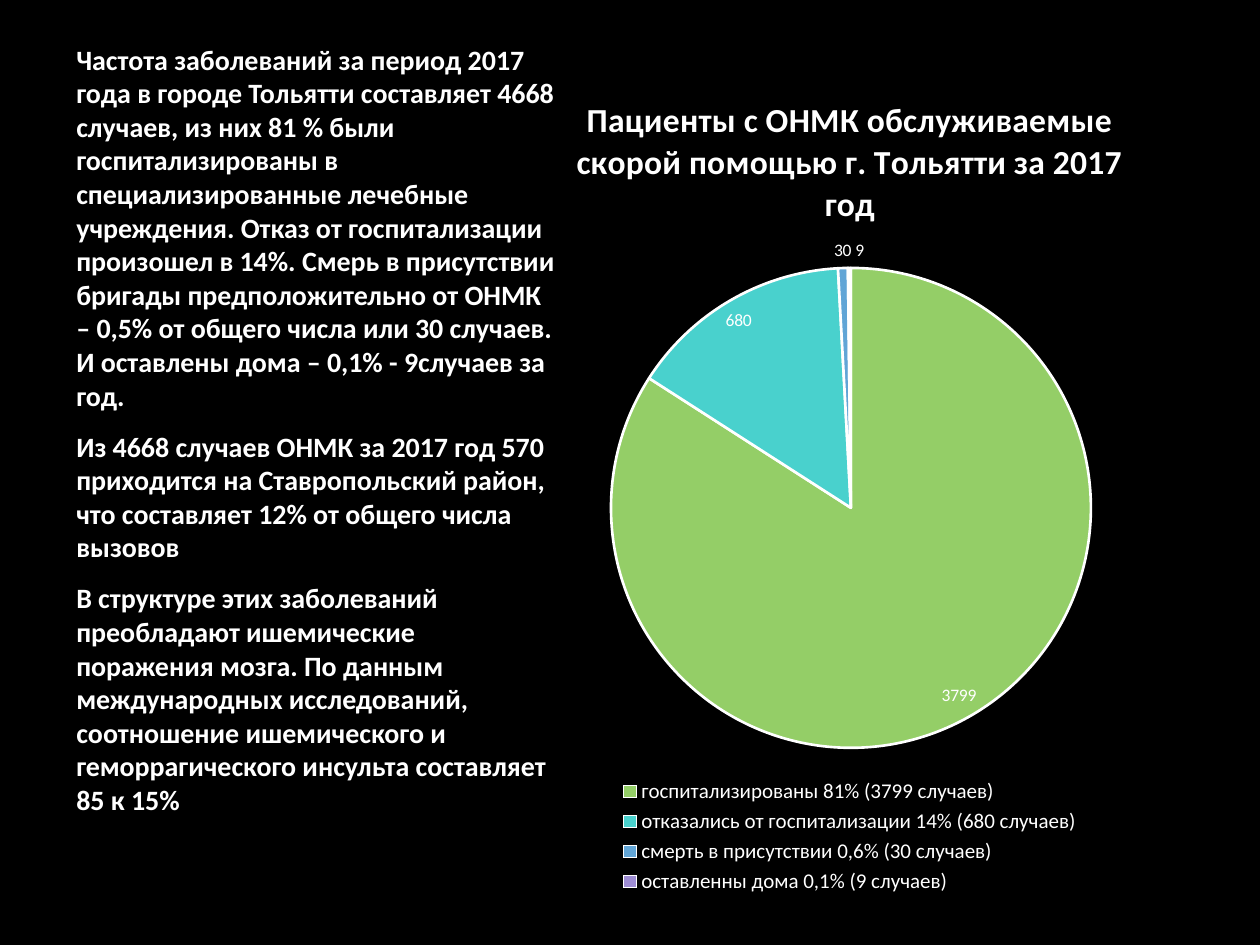
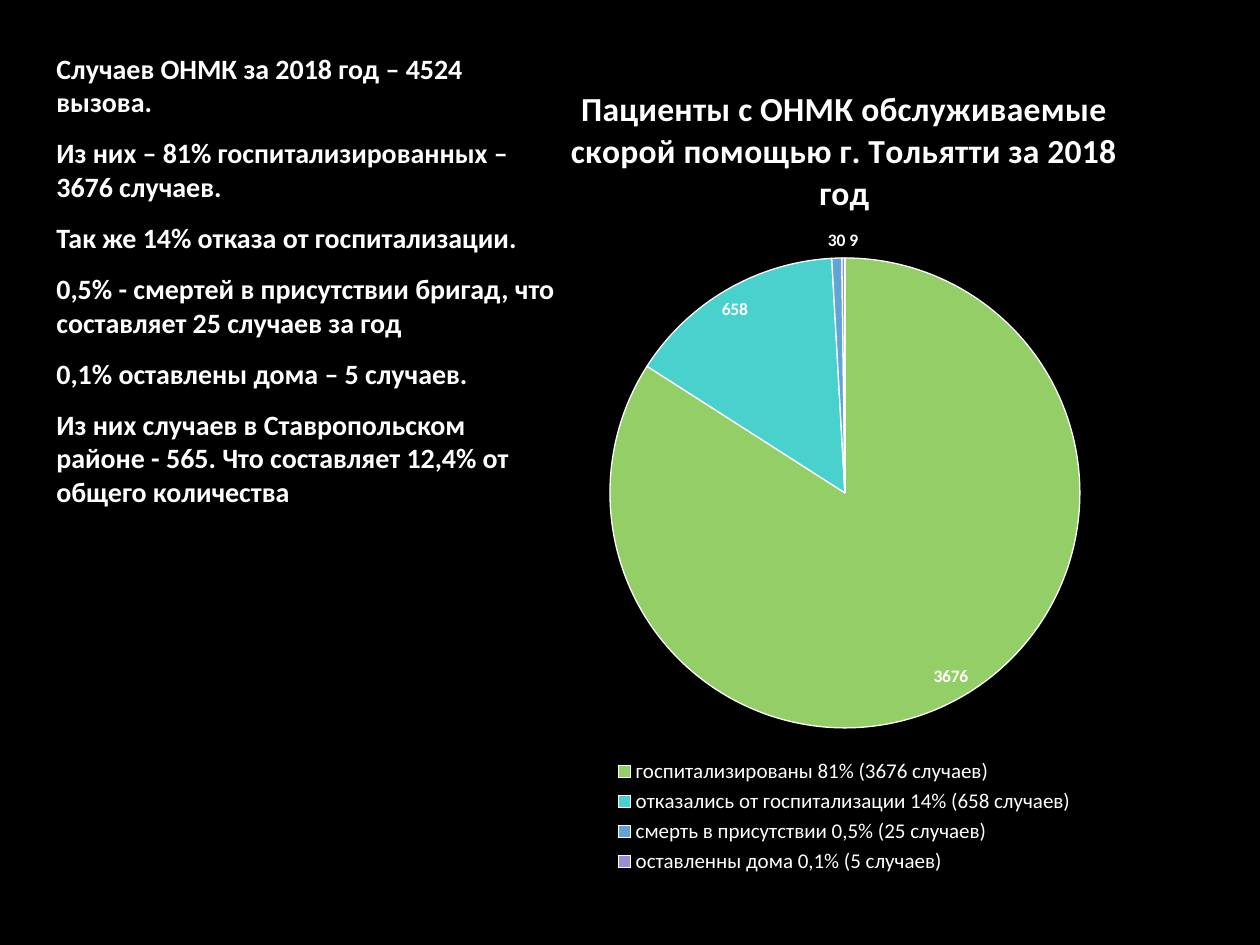
from dataclasses import dataclass

from lxml.etree import SubElement
from pptx import Presentation
from pptx.chart.data import CategoryChartData
from pptx.dml.color import RGBColor
from pptx.enum.chart import XL_CHART_TYPE, XL_LABEL_POSITION, XL_LEGEND_POSITION
from pptx.oxml.ns import qn
from pptx.util import Pt

UNIT = 914400 / 126


@dataclass(frozen=True)
class Theme:
    font: str = "Calibri"
    back: str = "000000"
    ink: str = "FFFFFF"
    slices: tuple = ("94CE67", "49D1CD", "61A5D6", "9D8CD3")
    body: float = 16
    title: float = 19.2
    legend: float = 12
    label: float = 10
    gap: float = 10


THEME = Theme()

CASES_2017 = [
    "Частота заболеваний за период 2017 года в городе Тольятти составляет "
    "4668 случаев, из них 81 % были госпитализированы в специализированные "
    "лечебные учреждения. Отказ от госпитализации произошел в 14%. Смерь в "
    "присутствии бригады предположительно от ОНМК – 0,5% от общего числа или "
    "30 случаев. И оставлены дома – 0,1% - 9случаев за год.",
    "Из 4668 случаев ОНМК за 2017 год 570 приходится на Ставропольский район, "
    "что составляет 12% от общего числа вызовов",
    "В структуре этих заболеваний преобладают ишемические поражения мозга. "
    "По данным международных исследований, соотношение ишемического и "
    "геморрагического инсульта составляет 85 к 15%",
]
CASES_2018 = [
    "Случаев ОНМК за 2018 год – 4524 вызова.",
    "Из них – 81% госпитализированных – 3676 случаев.",
    "Так же 14% отказа от госпитализации.",
    "0,5% - смертей в присутствии бригад, что составляет 25 случаев за год",
    "0,1% оставлены дома – 5 случаев.",
    "Из них случаев в Ставропольском районе - 565. Что составляет 12,4% "
    "от общего количества",
]
GROUPS = ("госпитализированы", "отказались от госпитализации",
          "смерть в присутствии", "оставленны дома")


def px(*sizes):
    return [round(size * UNIT) for size in sizes]


def color(code):
    return RGBColor.from_string(code)


def style(font, size, bold=False):
    font.name = THEME.font
    font.size = Pt(size)
    font.bold = bold
    font.color.rgb = color(THEME.ink)


def add_page(deck):
    page = deck.slides.add_slide(deck.slide_layouts[6])
    page.background.fill.solid()
    page.background.fill.fore_color.rgb = color(THEME.back)
    return page


def add_text(page, box, lines):
    frame = page.shapes.add_textbox(*px(*box)).text_frame
    frame.word_wrap = True
    for at, line in enumerate(lines):
        para = frame.add_paragraph() if at else frame.paragraphs[0]
        para.text = line
        para.space_after = Pt(THEME.gap)
        style(para.font, THEME.body, True)


def place_plot(chart, box, disc):
    """Pin the pie to the square disc (left, top, side) inside the chart box."""
    area = chart._chartSpace.chart.plotArea
    for old in area.findall(qn("c:layout")):
        area.remove(old)
    layout = SubElement(area, qn("c:layout"))
    area.insert(0, layout)
    manual = SubElement(layout, qn("c:manualLayout"))
    left, top, wide, high = box
    x, y, side = disc
    rules = {"layoutTarget": "inner", "xMode": "edge", "yMode": "edge",
             "x": (x - left) / wide, "y": (y - top) / high,
             "w": side / wide, "h": side / high}
    for name, value in rules.items():
        SubElement(manual, qn(f"c:{name}")).set("val", str(value))


def add_pie(page, box, disc, year, shares, values, line, bold):
    data = CategoryChartData()
    data.categories = [f"{group} {share}" for group, share in zip(GROUPS, shares)]
    data.add_series("Series 1", values)
    chart = page.shapes.add_chart(XL_CHART_TYPE.PIE, *px(*box), data).chart
    style(chart.font, THEME.label)

    chart.has_title = True
    para = chart.chart_title.text_frame.paragraphs[0]
    para.text = f"Пациенты с ОНМК обслуживаемые скорой помощью г. Тольятти за {year} год"
    style(para.font, THEME.title, True)
    chart.chart_title.include_in_layout = False

    chart.has_legend = True
    chart.legend.position = XL_LEGEND_POSITION.BOTTOM
    chart.legend.include_in_layout = False
    style(chart.legend.font, THEME.legend)

    plot = chart.plots[0]
    plot.vary_by_categories = True
    plot.has_data_labels = True
    labels = plot.data_labels
    labels.show_value = True
    labels.show_percentage = False
    labels.position = XL_LABEL_POSITION.BEST_FIT
    style(labels.font, THEME.label, bold)
    for at, code in enumerate(THEME.slices):
        form = plot.series[0].points[at].format
        form.fill.solid()
        form.fill.fore_color.rgb = color(code)
        form.line.color.rgb = color(THEME.ink)
        form.line.width = Pt(line)
    place_plot(chart, box, disc)


def main():
    deck = Presentation()
    deck.slide_width, deck.slide_height = px(1260, 945)

    page = add_page(deck)
    add_text(page, (64, 36, 507, 873), CASES_2017)
    add_pie(page, (496, 66, 708, 833), (611, 268, 480), 2017,
            ("81% (3799 случаев)", "14% (680 случаев)",
             "0,6% (30 случаев)", "0,1% (9 случаев)"),
            (3799, 680, 30, 9), line=1.5, bold=False)

    page = add_page(deck)
    add_text(page, (44, 45, 525, 863), CASES_2018)
    add_pie(page, (481, 55, 727, 824), (610, 258, 470), 2018,
            ("81% (3676 случаев)", "14% (658 случаев)",
             "0,5% (25 случаев)", "0,1% (5 случаев)"),
            (3676, 658, 30, 9), line=0.75, bold=True)

    deck.save("out.pptx")


if __name__ == "__main__":
    main()
